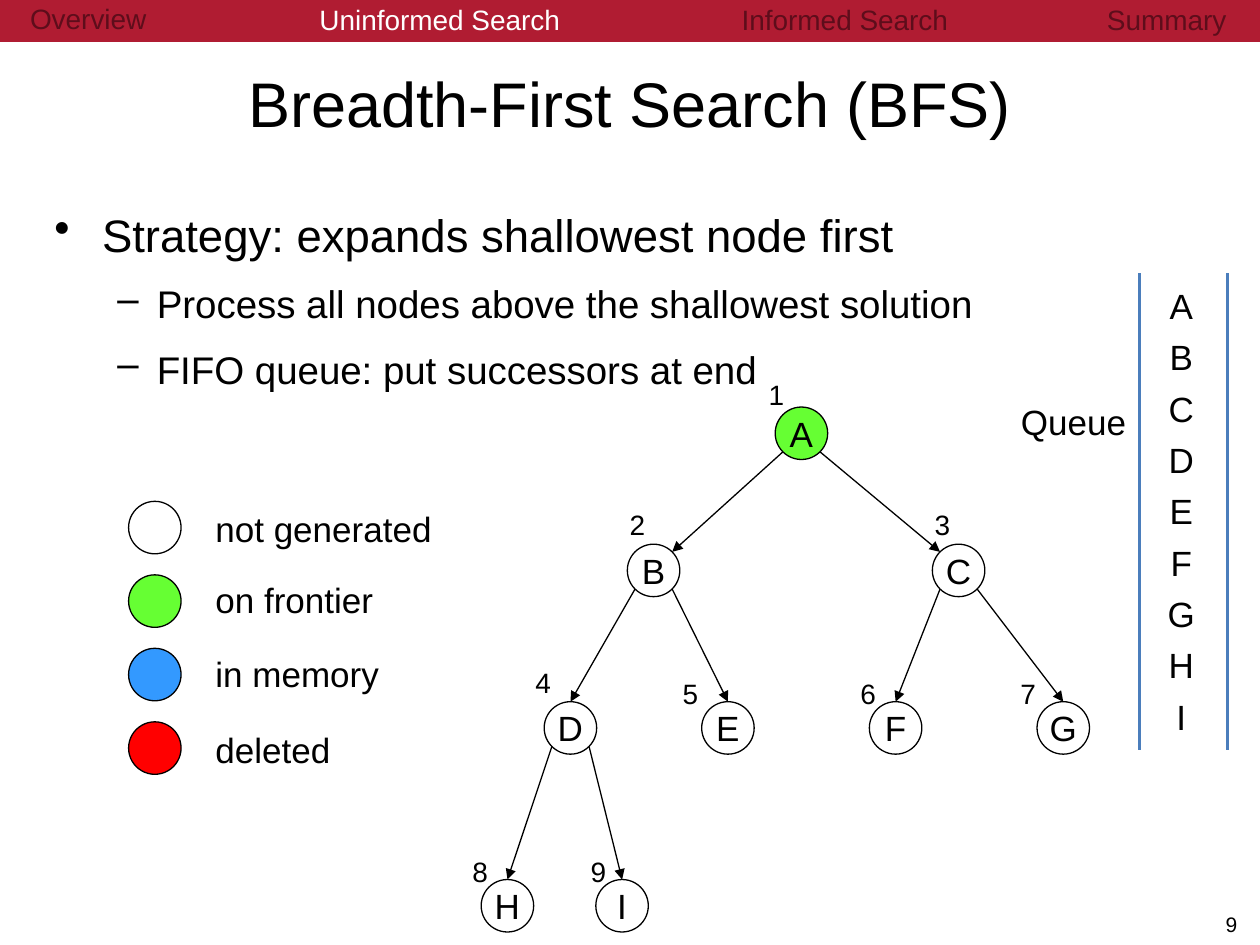
from dataclasses import dataclass

from lxml import etree
from pptx import Presentation
from pptx.dml.color import RGBColor
from pptx.enum import shapes, text
from pptx.oxml import ns
from pptx.util import Pt


@dataclass(frozen=True)
class Theme:
    font: str = "Arial"
    banner: str = "B01C32"
    muted: str = "5E0D1B"
    white: str = "FFFFFF"
    ink: str = "000000"
    frontier: str = "66FF33"
    memory: str = "3399FF"
    deleted: str = "FF0000"
    rail: str = "4B7EBC"
    title: int = 36
    bullet: int = 26
    sub_bullet: int = 22
    label: int = 20
    small: int = 16
    footer: int = 12


THEME = Theme()
LEFT, CENTER, RIGHT = text.PP_ALIGN.LEFT, text.PP_ALIGN.CENTER, text.PP_ALIGN.RIGHT
TOP, MIDDLE = text.MSO_ANCHOR.TOP, text.MSO_ANCHOR.MIDDLE
DIAMETER = 30
INSET = DIAMETER * 0.146  # where a 45 degree ray meets the circle, from its box edge

# node: (left, top, visit number offset x, y), relative to the tree box
NODES = {
    "A": (168, 0, -10.8, -20.2), "B": (83.5, 78.4, -5.8, -24.5),
    "C": (257.8, 78.4, -5.8, -24.5), "D": (36, 168.4, -12.2, -24.5),
    "E": (126, 168.4, -18, -18), "F": (221.8, 168.4, -12.2, -18),
    "G": (317.6, 168.4, -16.6, -18), "H": (0, 270, -12.2, -18),
    "I": (65.5, 270, -10.1, -18),
}
EDGES = ["AB", "AC", "BD", "BE", "CF", "CG", "DH", "DI"]


def style(para, size, color=THEME.ink, align=LEFT):
    para.alignment = align
    para.font.name = THEME.font
    para.font.size = Pt(size)
    para.font.color.rgb = RGBColor.from_string(color)


def add_label(page, box, words, size, color=THEME.ink, align=LEFT, anchor=TOP):
    frame = page.shapes.add_textbox(*map(Pt, box)).text_frame
    frame.word_wrap = True
    frame.vertical_anchor = anchor
    frame.text = words
    style(frame.paragraphs[0], size, color, align)


def add_line(page, start, end, color, width, arrow=False):
    line = page.shapes.add_connector(
        shapes.MSO_CONNECTOR.STRAIGHT, *map(Pt, (*start, *end)))
    line.line.color.rgb = RGBColor.from_string(color)
    line.line.width = Pt(width)
    if arrow:
        etree.SubElement(line.line._get_or_add_ln(), ns.qn("a:tailEnd"), type="triangle")
    etree.SubElement(line._element.spPr, ns.qn("a:effectLst"))


def add_circle(page, left, top, fill=None, letter=""):
    circle = page.shapes.add_shape(
        shapes.MSO_SHAPE.OVAL, *map(Pt, (left, top, DIAMETER, DIAMETER)))
    circle.shadow.inherit = False
    if fill:
        circle.fill.solid()
        circle.fill.fore_color.rgb = RGBColor.from_string(fill)
    else:
        circle.fill.background()
    circle.line.color.rgb = RGBColor.from_string(THEME.ink)
    circle.line.width = Pt(0.75)
    if letter:
        frame = circle.text_frame
        frame.word_wrap = False
        frame.vertical_anchor = MIDDLE
        frame.text = letter
        style(frame.paragraphs[0], THEME.label, align=CENTER)


def add_banner(page, box):
    left, top, width, height = box
    band = page.shapes.add_shape(shapes.MSO_SHAPE.RECTANGLE, *map(Pt, box))
    band.shadow.inherit = False
    band.fill.solid()
    band.fill.fore_color.rgb = RGBColor.from_string(THEME.banner)
    band.line.fill.background()
    tabs = [("Overview", 0.7, 0, 99.4, THEME.muted),
            ("Uninformed Search", 154.8, 0.7, 193, THEME.white),
            ("Informed Search", 383.8, 0.4, 198, THEME.muted),
            ("Summary", 615.6, 0.7, 102.2, THEME.muted)]
    for words, x, y, tab_width, color in tabs:
        add_label(page, (left + x, top + y, tab_width, 21), words,
                  THEME.small, color, CENTER, MIDDLE)


def add_bullets(page, box):
    frame = page.shapes.add_textbox(*map(Pt, box)).text_frame
    frame.word_wrap = True
    items = [("Strategy: expands shallowest node first", 0),
             ("Process all nodes above the shallowest solution", 1),
             ("FIFO queue: put successors at end", 1)]
    levels = [("•", 27.2, 27.2, THEME.bullet), ("–", 58.5, 22.5, THEME.sub_bullet)]
    for index, (words, level) in enumerate(items):
        para = frame.add_paragraph() if index else frame.paragraphs[0]
        mark, margin, hang, size = levels[level]
        para.text = words
        para.level = level
        para.line_spacing = 1.3
        if index:
            para.space_before = Pt(3)
        props = para._p.get_or_add_pPr()
        props.set("marL", str(Pt(margin)))
        props.set("indent", str(-Pt(hang)))
        etree.SubElement(props, ns.qn("a:buChar"), char=mark)
        style(para, size)


def add_tree(page, box):
    left, top = box[:2]
    for number, (letter, (x, y, shift_x, shift_y)) in enumerate(NODES.items(), 1):
        add_circle(page, left + x, top + y,
                   THEME.frontier if letter == "A" else None, letter)
        add_label(page, (left + x + shift_x, top + y + shift_y, 24, 26.6),
                  str(number), THEME.small)
    # Arrows leave at a lower corner; steep ones arrive at the top centre
    for parent, child in EDGES:
        x1, y1 = NODES[parent][:2]
        x2, y2 = NODES[child][:2]
        goes_right = x2 > x1
        near, far = INSET, DIAMETER - INSET
        start = (left + x1 + (far if goes_right else near), top + y1 + far)
        if parent == "A":
            end = (left + x2 + (near if goes_right else far), top + y2 + near)
        else:
            end = (left + x2 + DIAMETER / 2, top + y2)
        add_line(page, start, end, THEME.ink, 0.75, arrow=True)


def add_legend(page, box):
    left, top, width, height = box
    entries = [("not generated", None, 0), ("on frontier", THEME.frontier, -1.5),
               ("in memory", THEME.memory, -1), ("deleted", THEME.deleted, 0)]
    pitch = (height - DIAMETER) / (len(entries) - 1)
    for index, (words, fill, nudge) in enumerate(entries):
        y = top + index * pitch
        add_circle(page, left, y, fill)
        add_label(page, (left + 42.5, y + nudge, width - 42.5, 31.5), words, THEME.label)


def add_queue(page, box):
    left, top, width, height = box
    rail = left + 75
    for x in (rail, left + width):
        add_line(page, (x, top), (x, top + height), THEME.rail, 1.5)
    add_label(page, (left, top + 69, 75, 31.5), "Queue", THEME.label, align=CENTER)
    for index, letter in enumerate(NODES):
        add_label(page, (rail + 6, top + 2.7 + index * 29.35, 36, 31.5),
                  letter, THEME.label, align=CENTER)


def build_search_slide(page, box):
    left, top, width, height = box
    add_banner(page, (left, top, width, 24))
    add_label(page, (left, top + 33.3, width, 54), "Breadth-First Search (BFS)",
              THEME.title, align=CENTER)
    add_bullets(page, (left + 24, top + 105.2, 696, 435))
    add_tree(page, (left + 275, top + 232.6, 347.6, 300))
    add_legend(page, (left + 73.5, top + 286.5, 190, 156))
    add_queue(page, (left + 576, top + 156.2, 125.3, 272.2))
    # Page number
    add_label(page, (left + 654, top + height - 24, 60, 24), "9",
              THEME.footer, align=RIGHT, anchor=MIDDLE)


def main():
    deck = Presentation()
    deck.slide_width, deck.slide_height = Pt(720), Pt(540)
    page = deck.slides.add_slide(deck.slide_layouts[6])
    build_search_slide(page, (0, 0, 720, 540))
    deck.save("out.pptx")


if __name__ == "__main__":
    main()
